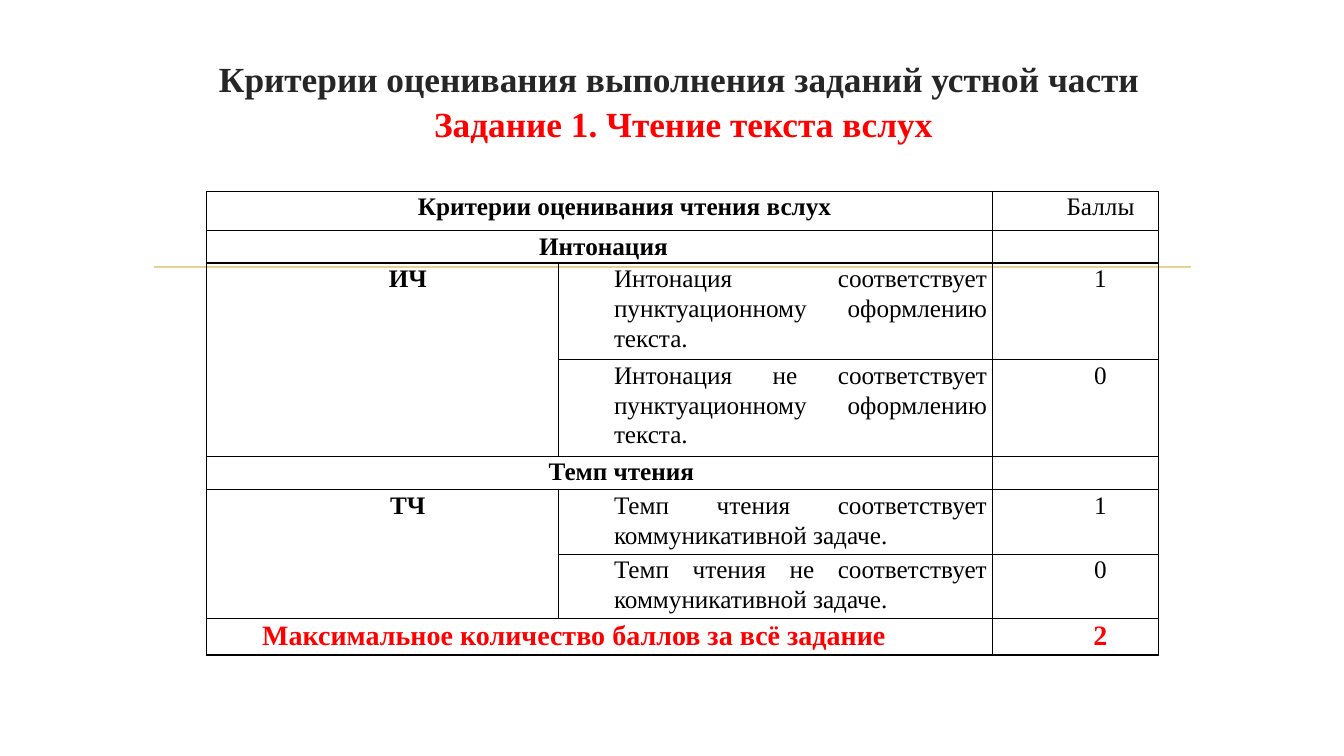
from copy import deepcopy

from lxml.etree import SubElement
from pptx import Presentation
from pptx.dml.color import RGBColor
from pptx.enum.shapes import MSO_CONNECTOR as Connector
from pptx.enum.text import MSO_ANCHOR as Anchor, PP_ALIGN as Align
from pptx.oxml.ns import qn
from pptx.util import Inches, Pt

COLORS = {"heading": "262626", "accent": "FF0000", "text": "000000", "rule": "E8D191"}
FONT = "Times New Roman"
COLUMN_WIDTHS = [3.49, 4.3, 1.65]
ROW_HEIGHTS = [0.39, 0.32, 0.96, 0.96, 0.33, 0.64, 0.64, 0.36]
MERGES = [((0, 0), (0, 1)), ((1, 0), (1, 1)), ((2, 0), (3, 0)),
          ((4, 0), (4, 1)), ((5, 0), (6, 0)), ((7, 0), (7, 1))]
CRITERIA = [
    ["Критерии оценивания чтения вслух", "", "Баллы"],
    ["Интонация", "", ""],
    ["ИЧ", "Интонация соответствует пунктуационному оформлению текста.", "1"],
    ["", "Интонация не соответствует пунктуационному оформлению текста.", "0"],
    ["Темп чтения ", "", ""],
    ["ТЧ", "Темп чтения соответствует коммуникативной задаче.", "1"],
    ["", "Темп чтения не соответствует коммуникативной задаче.", "0"],
    ["Максимальное количество баллов за всё задание", "", "2"],
]


def apply(target, values):
    """Set every attribute of target from a dict of values."""
    for name, value in values.items():
        setattr(target, name, value)


def add_text(paragraph, text, size, color, bold):
    """Append a formatted run to a paragraph and return it."""
    run = paragraph.add_run()
    run.text = text
    apply(run.font, {"name": FONT, "size": Pt(size), "bold": bold})
    run.font.color.rgb = RGBColor.from_string(COLORS[color])
    return run


def add_heading(slide, left, top, width, height):
    """Fill the title placeholder with the two heading lines."""
    heading = slide.shapes.title
    apply(heading, {"left": Inches(left), "top": Inches(top),
                    "width": Inches(width), "height": Inches(height)})
    apply(heading.text_frame, {"word_wrap": True, "vertical_anchor": Anchor.MIDDLE,
                               "margin_bottom": Inches(0.44)})
    paragraph = heading.text_frame.paragraphs[0]
    apply(paragraph, {"alignment": Align.CENTER, "line_spacing": 1.07})
    section = add_text(paragraph, "Критерии оценивания выполнения заданий устной части ",
                       25.2, "heading", True)
    paragraph.add_line_break()
    paragraph._p.find(qn("a:br")).append(deepcopy(section._r.rPr))
    add_text(paragraph, "Задание 1. Чтение текста вслух", 25.2, "accent", True)


def add_rule(slide, left, top, width):
    """Draw the thin horizontal rule that runs behind the table."""
    rule = slide.shapes.add_connector(Connector.STRAIGHT, Inches(left), Inches(top),
                                      Inches(left + width), Inches(top))
    rule.line.width = Pt(1.25)
    rule.line.color.rgb = RGBColor.from_string(COLORS["rule"])
    SubElement(rule._element.spPr, qn("a:effectLst"))


def add_borders(cell):
    """Outline a cell on all four sides and leave it unfilled."""
    properties = cell._tc.get_or_add_tcPr()
    for side in ("a:lnL", "a:lnR", "a:lnT", "a:lnB"):
        border = SubElement(properties, qn(side), w=str(Pt(1)))
        SubElement(SubElement(border, qn("a:solidFill")), qn("a:srgbClr"), val=COLORS["text"])
    cell.fill.background()


def fill_cell(cell, text, row, column):
    """Write one cell, styled by its place in the table."""
    total = row == len(CRITERIA) - 1
    side = Inches(0.07 if column == 2 else 0.05)
    apply(cell, {"margin_left": side, "margin_right": side,
                 "margin_top": 0, "margin_bottom": 0})
    add_borders(cell)
    if not text:
        return
    paragraph = cell.text_frame.paragraphs[0]
    justified = column == 1 or (total and column == 0)
    apply(paragraph, {"alignment": Align.JUSTIFY if justified else Align.CENTER,
                      "line_spacing": 1.07})
    indent = Inches(0.08 if text == "Интонация" else 0.5)
    for name, value in {"marL": indent, "indent": 0}.items():
        paragraph._p.get_or_add_pPr().set(name, str(value))
    add_text(paragraph, text, 20 if total else 18, "accent" if total else "text",
             total or column == 0)


def add_criteria(slide, left, top):
    """Build the table of criteria and points."""
    table = slide.shapes.add_table(
        len(ROW_HEIGHTS), len(COLUMN_WIDTHS), Inches(left), Inches(top),
        Inches(sum(COLUMN_WIDTHS)), Inches(sum(ROW_HEIGHTS))).table
    apply(table, {"first_row": False, "horz_banding": False})
    for column, width in zip(table.columns, COLUMN_WIDTHS):
        column.width = Inches(width)
    for row, height in zip(table.rows, ROW_HEIGHTS):
        row.height = Inches(height)
    for first, last in MERGES:
        table.cell(*first).merge(table.cell(*last))
    for row, texts in enumerate(CRITERIA):
        for column, text in enumerate(texts):
            fill_cell(table.cell(row, column), text, row, column)


def main():
    """Assemble and save the slide."""
    deck = Presentation()
    apply(deck, {"slide_width": Inches(13.33), "slide_height": Inches(7.5)})
    slide = deck.slides.add_slide(deck.slide_layouts[5])
    add_rule(slide, 1.53, 2.65, 10.28)
    add_heading(slide, 1.53, 0.47, 10.5, 1.43)
    add_criteria(slide, 2.05, 1.9)
    deck.save("out.pptx")


if __name__ == "__main__":
    main()
